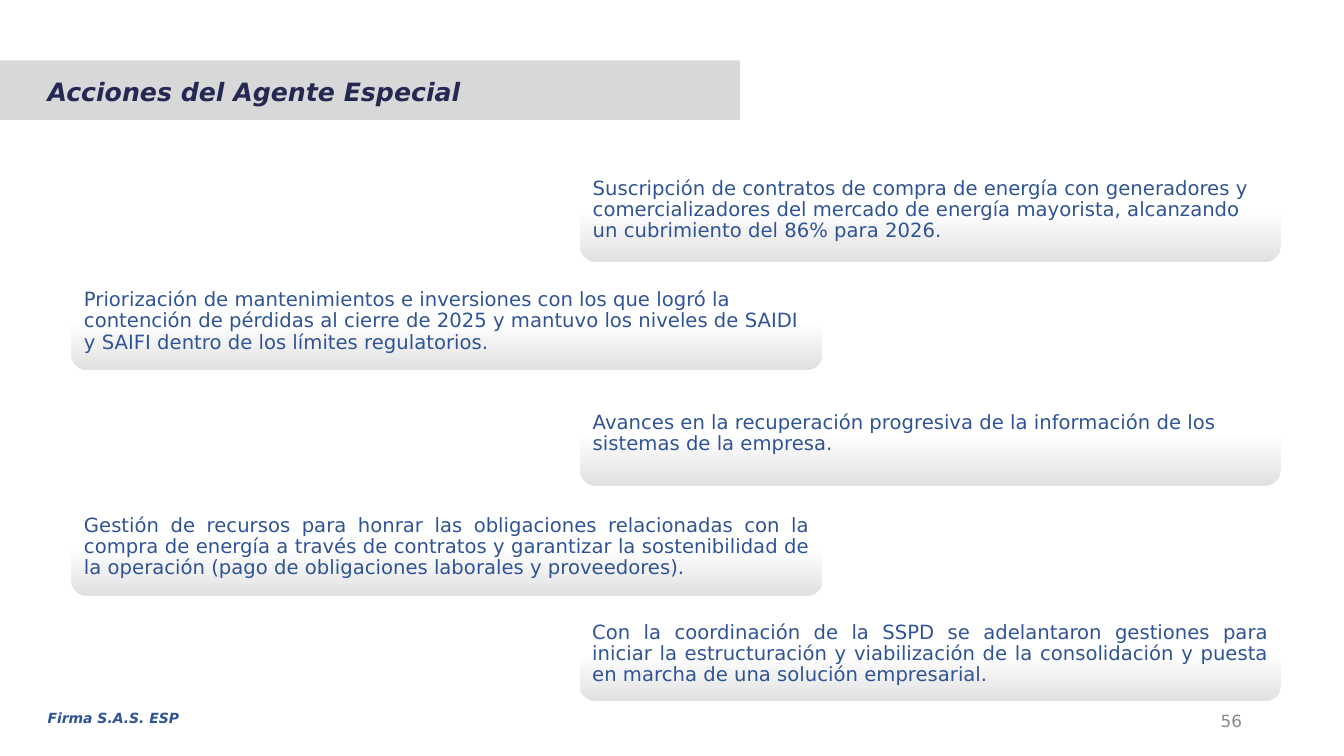
import copy
from dataclasses import dataclass

import pptx
import pptx.dml.color
import pptx.enum.shapes
import pptx.enum.text
import pptx.util

ALIGN = pptx.enum.text.PP_ALIGN
ANCHOR = pptx.enum.text.MSO_ANCHOR
SHAPE = pptx.enum.shapes.MSO_SHAPE

# The slide is a grid of 100 columns by 100 rows
WIDTH, HEIGHT = pptx.util.Inches(13.33), pptx.util.Inches(7.5)
LEFT_CARD = (5.3, 55.9)     # first column, columns wide
RIGHT_CARD = (43.13, 52.2)
MARGIN = 2.8


@dataclass(frozen=True)
class Theme:
    font: str = "DejaVu Sans"
    navy: str = "242853"
    blue: str = "2F5496"
    muted: str = "888888"
    banner: str = "D8D8D8"
    card_top: str = "FFFFFF"
    card_bottom: str = "E1E1E1"
    title: int = 18
    body: int = 14
    number: int = 12
    footer: int = 10


THEME = Theme()

# Top row, rows high, alignment, text; cards alternate right and left
ACTIONS = [
    (20.93, 13.73, ALIGN.LEFT,
     "Suscripción de contratos de compra de energía con generadores y "
     "comercializadores del mercado de energía mayorista, alcanzando un "
     "cubrimiento del 86% para 2026."),
    (36.13, 12.8, ALIGN.LEFT,
     "Priorización de mantenimientos e inversiones con los que logró la "
     "contención de pérdidas al cierre de 2025 y mantuvo los niveles de SAIDI "
     "y SAIFI dentro de los límites regulatorios."),
    (50.53, 13.73, ALIGN.LEFT,
     "Avances en la recuperación progresiva de la información de los sistemas "
     "de la empresa."),
    (66, 12.8, ALIGN.JUSTIFY,
     "Gestión de recursos para honrar las obligaciones relacionadas con la "
     "compra de energía a través de contratos y garantizar la sostenibilidad "
     "de la operación (pago de obligaciones laborales y proveedores)."),
    (80.4, 12.27, ALIGN.JUSTIFY,
     "Con la coordinación de la SSPD se adelantaron gestiones para iniciar la "
     "estructuración y viabilización de la consolidación y puesta en marcha "
     "de una solución empresarial."),
]


def rgb(value):
    return pptx.dml.color.RGBColor.from_string(value)


def place(col, row, cols, rows):
    """Turn grid units into left, top, width and height."""
    return (int(WIDTH * col / 100), int(HEIGHT * row / 100),
            int(WIDTH * cols / 100), int(HEIGHT * rows / 100))


def write(tf, text, size, color, align=ALIGN.LEFT, strong=False):
    tf.word_wrap = True
    p = tf.paragraphs[0]
    p.alignment = align
    r = p.add_run()
    r.text = text
    r.font.name = THEME.font
    r.font.size = pptx.util.Pt(size)
    r.font.color.rgb = rgb(color)
    r.font.bold = r.font.italic = strong
    return p


def add_label(slide, box, *text, anchor=ANCHOR.TOP, **style):
    tf = slide.shapes.add_textbox(*place(*box)).text_frame
    tf.vertical_anchor = anchor
    write(tf, *text, **style)


def add_panel(slide, kind, box):
    sp = slide.shapes.add_shape(kind, *place(*box))
    sp.shadow.inherit = False
    sp.line.fill.background()
    return sp


def add_banner(slide, box):
    sp = add_panel(slide, SHAPE.RECTANGLE, box)
    sp.fill.solid()
    sp.fill.fore_color.rgb = rgb(THEME.banner)


def fade(fill):
    """White down to the middle, then grey towards the bottom."""
    fill.gradient()
    fill.gradient_angle = 270
    first, last = fill.gradient_stops
    first.color.rgb, first.position = rgb(THEME.card_top), 0
    last.color.rgb, last.position = rgb(THEME.card_bottom), 1
    top = fill._fill._gradFill.gsLst[0]
    middle = copy.deepcopy(top)
    middle.set("pos", "50000")
    top.addnext(middle)


def add_card(slide, box, align, text):
    sp = add_panel(slide, SHAPE.ROUNDED_RECTANGLE, box)
    fade(sp.fill)
    tf = sp.text_frame
    tf.vertical_anchor = ANCHOR.MIDDLE
    tf.margin_left = tf.margin_right = pptx.util.Inches(0.08)
    tf.margin_top = tf.margin_bottom = pptx.util.Inches(0.08)
    write(tf, text, THEME.body, THEME.blue, align).line_spacing = 0.9


def main():
    prs = pptx.Presentation()
    prs.slide_width, prs.slide_height = WIDTH, HEIGHT
    slide = prs.slides.add_slide(prs.slide_layouts[6])

    # Title on its banner
    add_banner(slide, (0, 8, 55.05, 7.87))
    add_label(slide, (MARGIN, 9.47, 47.5, 5.33), "Acciones del Agente Especial",
              THEME.title, THEME.navy, strong=True)

    # Action cards
    for i, (row, rows, align, text) in enumerate(ACTIONS):
        col, cols = LEFT_CARD if i % 2 else RIGHT_CARD
        add_card(slide, (col, row, cols, rows), align, text)

    # Footer
    add_label(slide, (MARGIN, 93.2, 12.5, 3.6), "Firma S.A.S. ESP",
              THEME.footer, THEME.blue, strong=True)
    add_label(slide, (70.65, 92.67, 22.5, 5.33), "56", THEME.number, THEME.muted,
              anchor=ANCHOR.MIDDLE, align=ALIGN.RIGHT)

    prs.save("out.pptx")


if __name__ == "__main__":
    main()
